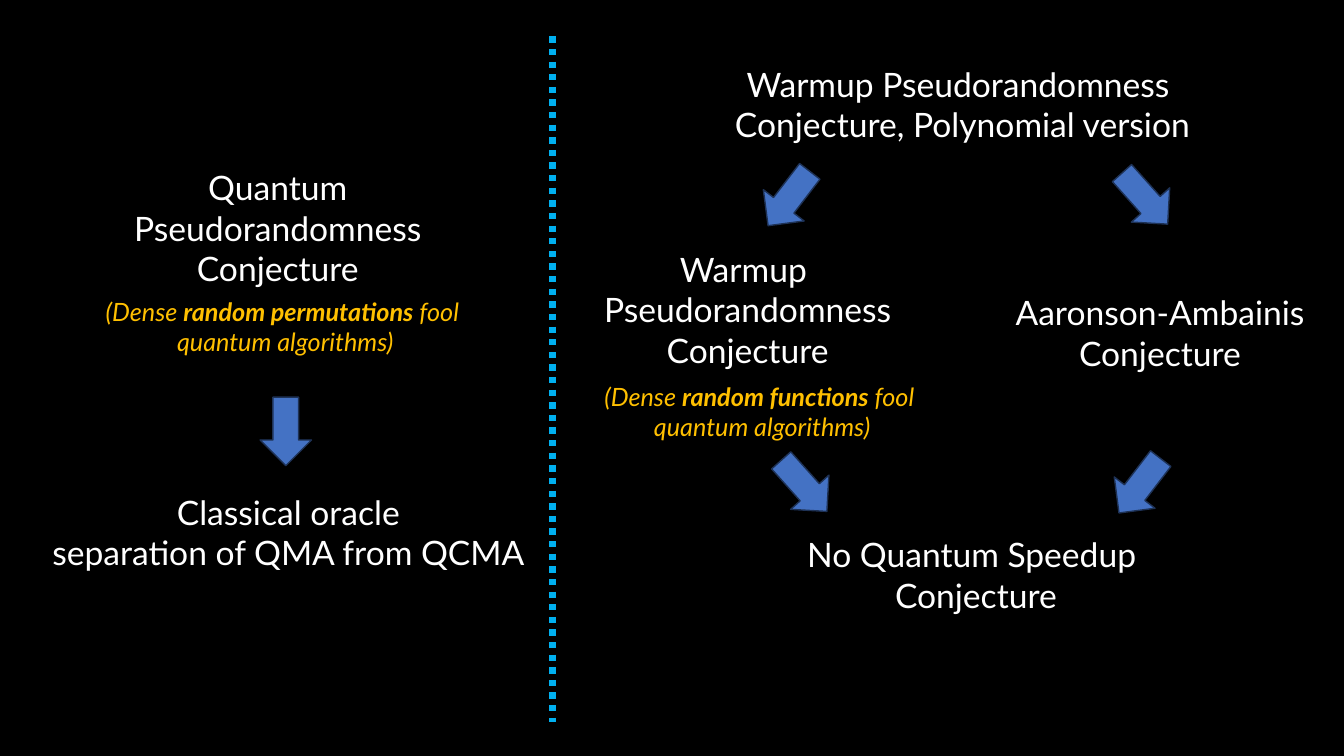
import pptx
import pptx.dml.color
import pptx.enum.dml
import pptx.enum.shapes
import pptx.enum.text
import pptx.oxml.ns
import pptx.util
from pptx.util import Inches

COLORS = {
    "background": "000000",
    "claim": "FFFFFF",
    "gloss": "FFC000",
    "arrow": "4472C4",
    "arrow_edge": "1E3256",
    "divider": "00B0F0",
}


def rgb(name):
    return pptx.dml.color.RGBColor.from_string(COLORS[name])


def add_statement(slide, place, pieces, size, color, italic=False):
    box = slide.shapes.add_textbox(*[Inches(length) for length in place])
    frame = box.text_frame
    frame.word_wrap = True
    frame.auto_size = pptx.enum.text.MSO_AUTO_SIZE.SHAPE_TO_FIT_TEXT
    paragraph = frame.paragraphs[0]
    paragraph.alignment = pptx.enum.text.PP_ALIGN.CENTER
    for text, bold in pieces:
        for number, line in enumerate(text.split("\n")):
            if number:
                paragraph.add_line_break()
            run = paragraph.add_run()
            run.text = line
            run.font.name = "Lato"
            run.font.size = pptx.util.Pt(size)
            run.font.bold = bold
            run.font.italic = italic
            run.font.color.rgb = rgb(color)


deck = pptx.Presentation()
deck.slide_width = Inches(13.33)
deck.slide_height = Inches(7.5)
slide = deck.slides.add_slide(deck.slide_layouts[6])
slide.background.fill.solid()
slide.background.fill.fore_color.rgb = rgb("background")

claims = [
    ((7.06, 5.25, 5.24, 0.91), "No Quantum Speedup \nConjecture"),
    ((9.32, 2.85, 4.37, 0.91), "Aaronson-Ambainis Conjecture"),
    ((5.14, 2.42, 4.55, 1.31), "Warmup \nPseudorandomness Conjecture"),
    ((6.49, 0.58, 6.11, 0.91), "Warmup Pseudorandomness \nConjecture, Polynomial version"),
    ((0.48, 1.61, 4.55, 1.31), "Quantum\nPseudorandomness Conjecture"),
    ((0.24, 4.83, 5.24, 0.91), "Classical oracle\nseparation of QMA from QCMA"),
]
for place, claim in claims:
    add_statement(slide, place, [(claim, False)], 24, "claim")

glosses = [
    ((0.21, 2.89, 5.24, 0.71), "random permutations"),
    ((4.94, 3.73, 5.24, 0.71), "random functions"),
]
for place, subject in glosses:
    pieces = [("(Dense ", False), (subject, True), (" fool \nquantum algorithms)", False)]
    add_statement(slide, place, pieces, 18, "gloss", italic=True)

implications = [
    (7.57, 1.63, 37.5),
    (11.1, 1.63, 318.2),
    (11.05, 4.48, 37.5),
    (7.72, 4.48, 318.2),
    (2.58, 3.94, 0),
]
for left, top, angle in implications:
    arrow = slide.shapes.add_shape(
        pptx.enum.shapes.MSO_SHAPE.DOWN_ARROW,
        Inches(left), Inches(top), Inches(0.51), Inches(0.68),
    )
    arrow.rotation = angle
    arrow.shadow.inherit = False
    arrow.fill.solid()
    arrow.fill.fore_color.rgb = rgb("arrow")
    arrow.line.color.rgb = rgb("arrow_edge")
    arrow.line.width = pptx.util.Pt(1)

divider = slide.shapes.add_connector(
    pptx.enum.shapes.MSO_CONNECTOR.STRAIGHT,
    Inches(5.48), Inches(0.36), Inches(5.48), Inches(7.16),
)
divider.line.color.rgb = rgb("divider")
divider.line.width = pptx.util.Pt(4.5)
divider.line.dash_style = pptx.enum.dml.MSO_LINE.ROUND_DOT
divider_properties = divider._element.spPr
divider_properties.append(
    divider_properties.makeelement(pptx.oxml.ns.qn("a:effectLst"), {})
)

deck.save("out.pptx")
